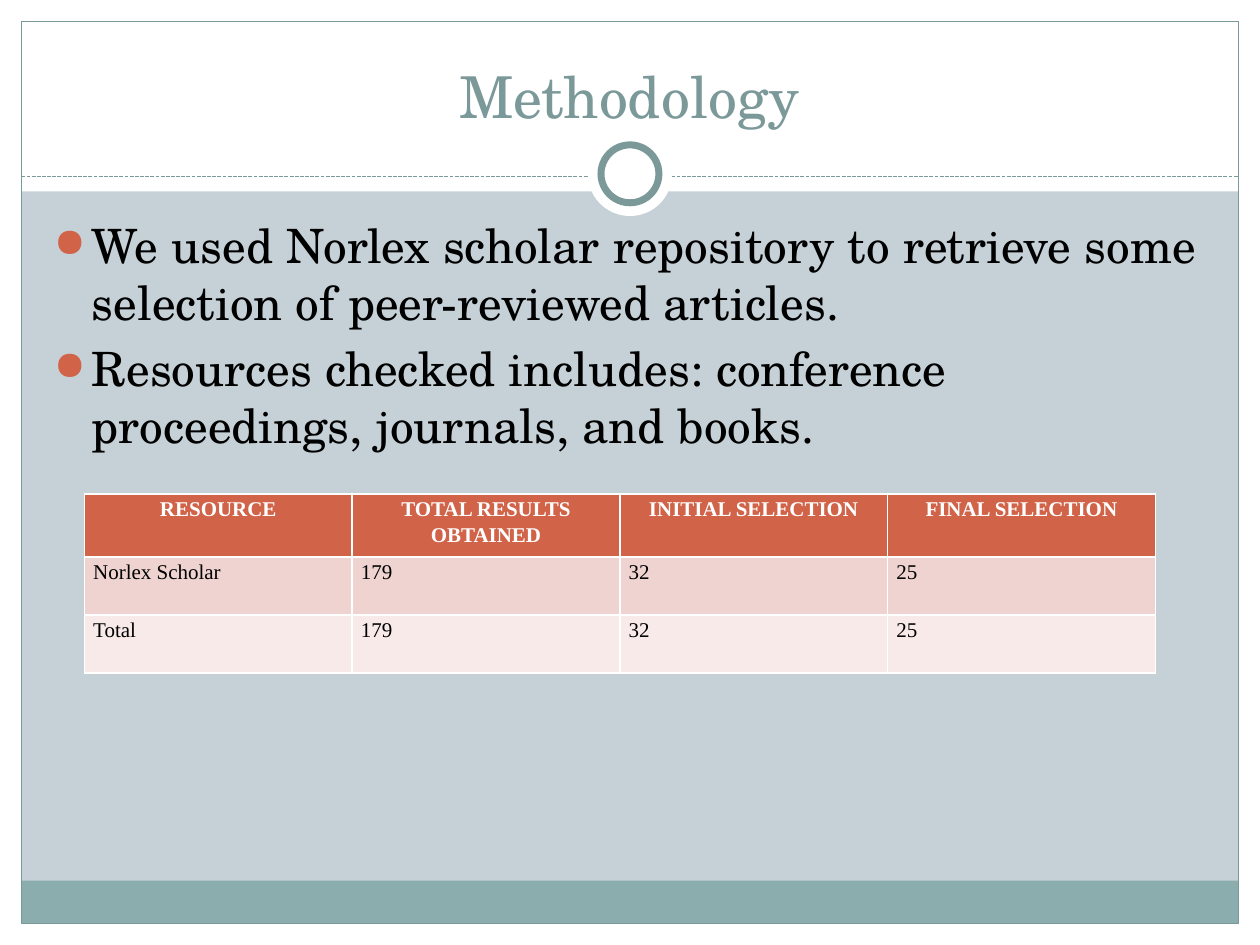
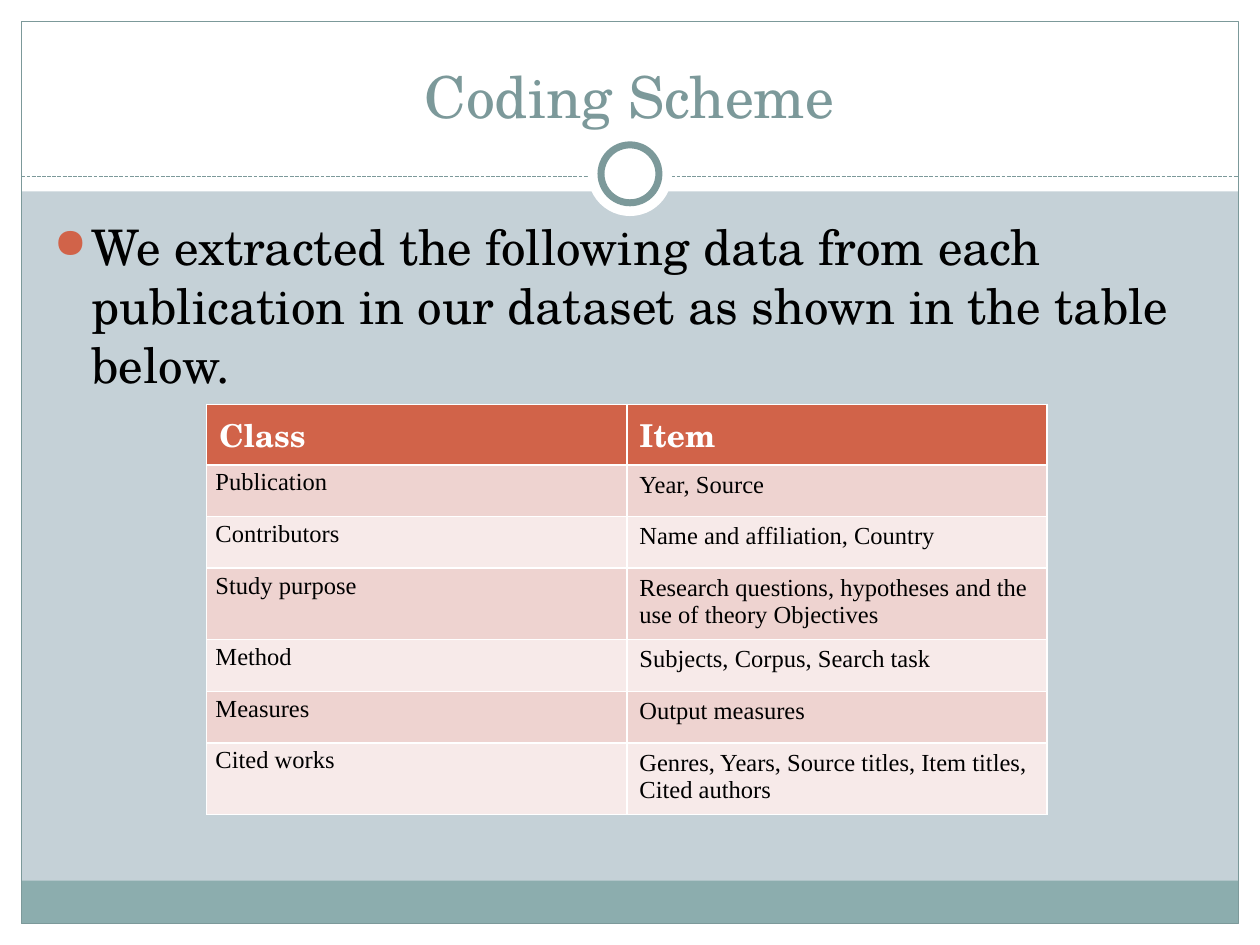
"""Build two slides on the method of a literature review."""
import pptx
import pptx.util
import pptx.oxml.ns
import pptx.dml.color
import pptx.enum.dml
import pptx.enum.shapes
import pptx.enum.text
from lxml import etree

Inches, Pt = pptx.util.Inches, pptx.util.Pt
RGBColor = pptx.dml.color.RGBColor
SHAPE = pptx.enum.shapes.MSO_SHAPE
ALIGN = pptx.enum.text.PP_ALIGN
ANCHOR = pptx.enum.text.MSO_ANCHOR
qn = pptx.oxml.ns.qn

BLACK = RGBColor(0, 0, 0)
WHITE = RGBColor(0xFF, 0xFF, 0xFF)
MIST = RGBColor(0xC5, 0xD1, 0xD7)
TEAL = RGBColor(0x8C, 0xAD, 0xAE)
SLATE = RGBColor(0x7C, 0x99, 0x9A)
RUST = RGBColor(0xD1, 0x63, 0x49)
BANDS = (RGBColor(0xEE, 0xD3, 0xD0), RGBColor(0xF7, 0xEA, 0xE9))

SERIF, TIMES = "TeX Gyre Schola", "Times New Roman"
WIDE, HIGH, EDGE = 10, 7.5, 0.17
LOOSE = (0.1, 0.05)
TIGHT = (0.07, 0)


def dot(para):
    """Give a paragraph a hanging round bullet."""
    props = para._p.get_or_add_pPr()
    props.set("marL", str(Inches(0.3)))
    props.set("indent", str(-Inches(0.3)))
    tint = etree.SubElement(props, qn("a:buClr"))
    etree.SubElement(tint, qn("a:srgbClr"), val=str(RUST))
    etree.SubElement(props, qn("a:buSzPct"), val="85000")
    etree.SubElement(props, qn("a:buChar"), char="●")


def write(frame, *lines, size, font=SERIF, color=BLACK, bold=False,
          align=ALIGN.LEFT, anchor=ANCHOR.TOP, pad=LOOSE, space=None,
          before=0, bullet=False):
    """Fill a text frame with one paragraph per line."""
    frame.word_wrap = True
    frame.vertical_anchor = anchor
    frame.margin_left = frame.margin_right = Inches(pad[0])
    frame.margin_top = frame.margin_bottom = Inches(pad[1])
    for num, line in enumerate(lines):
        para = frame.add_paragraph() if num else frame.paragraphs[0]
        para.alignment = align
        para.line_spacing = space
        para.space_before = Pt(before)
        if bullet:
            dot(para)
        run = para.add_run()
        run.text = line
        run.font.size, run.font.name = Pt(size), font
        run.font.bold, run.font.color.rgb = bold, color


def place(shape, box):
    """Move and size a shape."""
    shape.left, shape.top, shape.width, shape.height = map(Inches, box)


def block(slide, kind, box, fill=None, line=None, weight=0.75):
    """Add a plain preset shape."""
    shape = slide.shapes.add_shape(kind, *map(Inches, box))
    shape.shadow.inherit = False
    if fill is None:
        shape.fill.background()
    else:
        shape.fill.solid()
        shape.fill.fore_color.rgb = fill
    if line is None:
        shape.line.fill.background()
    else:
        shape.line.color.rgb = line
        shape.line.width = Pt(weight)
    return shape


def dash(slide, left, right, top):
    """Add a level dashed line."""
    line = slide.shapes.add_connector(
        pptx.enum.shapes.MSO_CONNECTOR.STRAIGHT,
        *map(Inches, (left, top, right, top)))
    line.line.color.rgb, line.line.width = SLATE, Pt(0.75)
    line.line.dash_style = pptx.enum.dml.MSO_LINE.SQUARE_DOT
    etree.SubElement(line._element.spPr, qn("a:effectLst"))
    return line


def ring(slide, size, **style):
    """Add a circle on the centre of the title rule."""
    box = ((WIDE - size) / 2, 1.38 - size / 2, size, size)
    return block(slide, SHAPE.OVAL, box, fill=WHITE, **style)


def decor(slide):
    """Draw the shared frame and move it to the slide's layout."""
    inner = WIDE - 2 * EDGE
    foot = HIGH - EDGE
    edges = ((0, foot, WIDE, EDGE), (0, 0, WIDE, 1.52),
             (0, 0, EDGE, HIGH), (WIDE - EDGE, 0, EDGE, HIGH))
    parts = [block(slide, SHAPE.RECTANGLE, box, fill=WHITE) for box in edges]
    parts += [
        block(slide, SHAPE.RECTANGLE, (EDGE, 6.99, inner, 0.34), fill=TEAL),
        block(slide, SHAPE.RECTANGLE, (EDGE, EDGE, inner, HIGH - 2 * EDGE),
              line=SLATE),
        dash(slide, EDGE, WIDE - EDGE, 1.4),
        ring(slide, 0.67),
        ring(slide, 0.46, line=SLATE, weight=4),
    ]
    tree = slide.slide_layout.shapes._spTree
    for num, part in enumerate(parts):
        part._element.xpath(".//p:cNvPr")[0].set("id", str(100 + num))
        tree.insert(2 + num, part._element)


def head(slide, text):
    """Place and fill the title."""
    place(slide.shapes.title, (0.33, 0.25, 9.33, 0.83))
    write(slide.shapes.title.text_frame, text, size=33, color=SLATE,
          align=ALIGN.CENTER, anchor=ANCHOR.BOTTOM)


def points(slide, *lines, size):
    """Add the bulleted body text."""
    box = slide.shapes.add_textbox(*map(Inches, (0.33, 1.67, 9.3, 5)))
    write(box.text_frame, *lines, size=size, before=size * 0.2, bullet=True)


def grid(slide, left, top, width, tall, rows, first, styles):
    """Add a table with a header format and one format per column."""
    count = len(rows[0])
    table = slide.shapes.add_table(
        len(rows), count, *map(Inches, (left, top, width, sum(tall)))).table
    for col in table.columns:
        col.width = Inches(width / count)
    for r, row in enumerate(rows):
        table.rows[r].height = Inches(tall[r])
        for c, text in enumerate(row):
            cell = table.cell(r, c)
            cell.fill.solid()
            cell.fill.fore_color.rgb = BANDS[(r - 1) % 2] if r else RUST
            style = dict(styles[c] if r else first)
            pad = style.get("pad", LOOSE)
            write(cell.text_frame, text, **style)
            cell.margin_left = cell.margin_right = Inches(pad[0])
            cell.margin_top = cell.margin_bottom = Inches(pad[1])
            cell.vertical_anchor = style.get("anchor", ANCHOR.TOP)


def method(slide):
    """Fill the methodology slide."""
    head(slide, "Methodology")
    points(slide,
           "We used Norlex scholar repository to retrieve some selection of "
           "peer-reviewed articles.",
           "Resources checked includes: conference proceedings, journals, "
           "and books.", size=27)
    rows = (
        ("RESOURCE", "TOTAL RESULTS OBTAINED", "INITIAL SELECTION",
         "FINAL SELECTION"),
        ("Norlex Scholar", "179", "32", "25"),
        ("Total", "179", "32", "25"),
    )
    plain = dict(size=12, font=TIMES, pad=TIGHT, space=1.15)
    first = dict(plain, color=WHITE, bold=True, align=ALIGN.CENTER)
    grid(slide, 0.67, 3.92, 8.5, (0.5, 0.46, 0.46), rows, first, [plain] * 4)


def coding(slide):
    """Fill the coding scheme slide."""
    head(slide, "Coding Scheme")
    points(slide,
           "We extracted the following data from each publication in our "
           "dataset as shown in the table below.", size=28)
    rows = (
        ("Class", "Item"),
        ("Publication", "Year, Source"),
        ("Contributors", "Name and affiliation, Country"),
        ("Study purpose",
         "Research questions, hypotheses and the use of theory Objectives"),
        ("Method", "Subjects, Corpus, Search task"),
        ("Measures", "Output measures"),
        ("Cited works",
         "Genres, Years, Source titles, Item titles, Cited authors"),
    )
    tall = (0.48, 0.41, 0.41, 0.53, 0.41, 0.41, 0.53)
    first = dict(size=18, color=WHITE, bold=True, anchor=ANCHOR.MIDDLE)
    item = dict(size=14, font=TIMES)
    label = dict(item, pad=TIGHT, space=1.15)
    grid(slide, 1.64, 3.21, 6.67, tall, rows, first, (label, item))


def main():
    """Build and save the deck."""
    deck = pptx.Presentation()
    deck.slide_width, deck.slide_height = Inches(WIDE), Inches(HIGH)
    back = deck.slide_master.background.fill
    back.solid()
    back.fore_color.rgb = MIST
    layout = deck.slide_layouts[5]
    slides = [deck.slides.add_slide(layout) for _ in range(2)]
    decor(slides[0])
    method(slides[0])
    coding(slides[1])
    deck.save("out.pptx")


if __name__ == "__main__":
    main()
